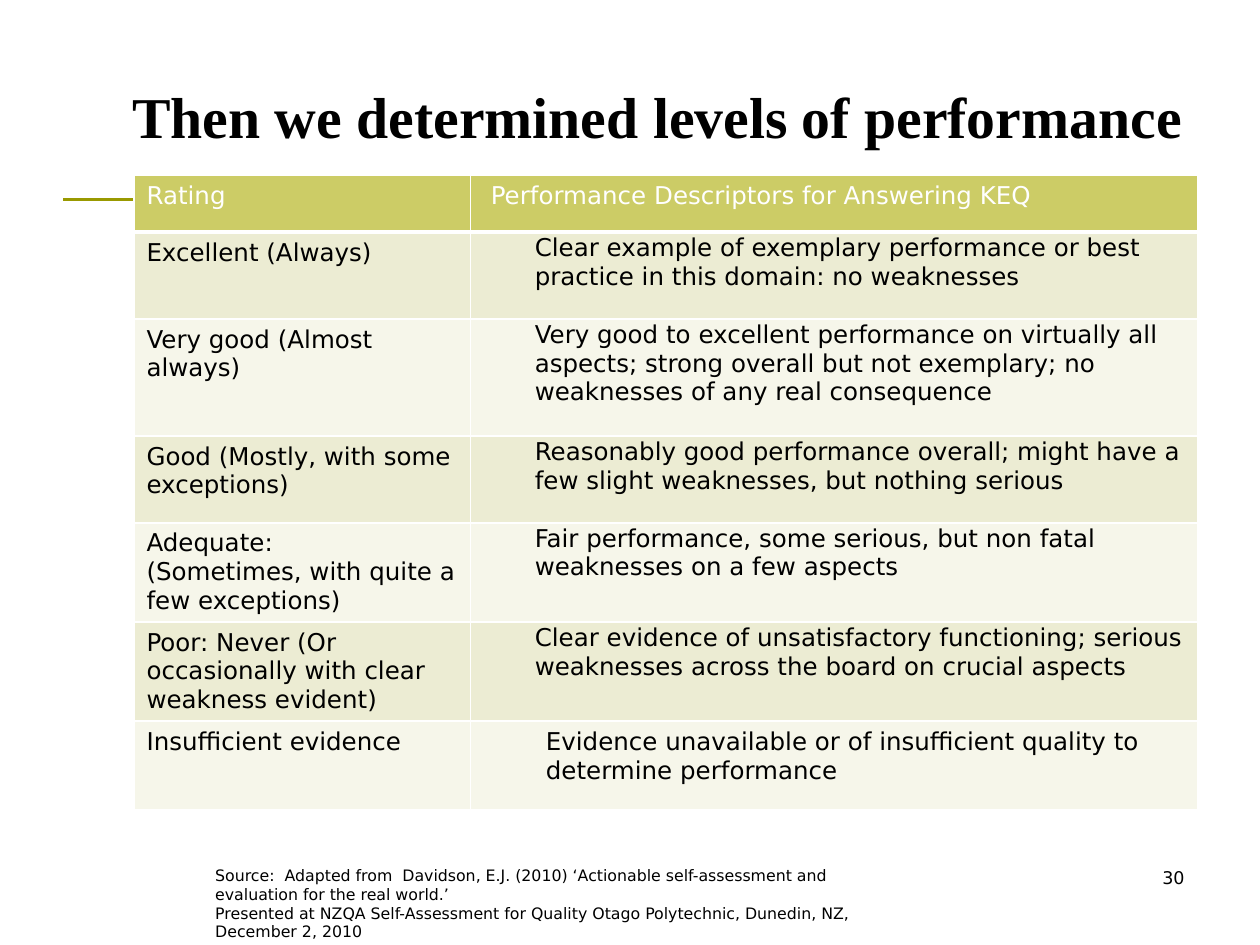
"""Build a slide with a table of performance ratings and their descriptors."""
import pptx
import pptx.dml.color
import pptx.enum.shapes
import pptx.enum.text
import pptx.oxml
import pptx.oxml.ns
import pptx.util
from pptx.util import Cm, Pt


def color(hex_code):
    return pptx.dml.color.RGBColor.from_string(hex_code)


def add_text(left, top, width, height, lines, font, size, align, bold=False):
    box = page.shapes.add_textbox(Cm(left), Cm(top), Cm(width), Cm(height))
    box.text_frame.word_wrap = True
    box.text_frame.text = "\n".join(lines)
    for para in box.text_frame.paragraphs:
        para.alignment = align
        for span in para.runs:
            span.font.name = font
            span.font.size = Pt(size)
            span.font.bold = bold
            span.font.color.rgb = color("000000")
    return box


SANS = "DejaVu Sans"
ALIGN = pptx.enum.text.PP_ALIGN
ROWS = [
    ("Rating", "Performance Descriptors for Answering KEQ"),
    ("Excellent (Always)",
     "Clear example of exemplary performance or best practice in this domain: no weaknesses"),
    ("Very good (Almost always)",
     "Very good to excellent performance on virtually all aspects; strong overall "
     "but not exemplary; no weaknesses of any real consequence"),
    ("Good (Mostly, with some exceptions)",
     "Reasonably good performance overall; might have a few slight weaknesses, but nothing serious"),
    ("Adequate:\v(Sometimes, with quite a few exceptions)",
     "Fair performance, some serious, but non fatal weaknesses on a few aspects"),
    ("Poor: Never (Or occasionally with clear weakness evident)",
     "Clear evidence of unsatisfactory functioning; serious weaknesses across the board on crucial aspects"),
    ("Insufficient evidence",
     "Evidence unavailable or of insufficient quality to determine performance"),
]
HEIGHTS = [1.14, 1.75, 2.36, 1.75, 2, 2, 1.78]
WIDTHS = [6.78, 14.66]

deck = pptx.Presentation()
deck.slide_width = Cm(25.4)
deck.slide_height = Cm(19.05)
page = deck.slides.add_slide(deck.slide_layouts[6])

rule = page.shapes.add_connector(
    pptx.enum.shapes.MSO_CONNECTOR.STRAIGHT, Cm(1.27), Cm(4.02), Cm(23.7), Cm(4.02))
rule.line.color.rgb = color("999900")
rule.line.width = Pt(1.5)
rule._element.spPr.append(pptx.oxml.parse_xml(
    f"<a:effectLst {pptx.oxml.ns.nsdecls('a')}/>"))

table = page.shapes.add_table(
    len(ROWS), len(WIDTHS), Cm(2.7), Cm(3.54), Cm(sum(WIDTHS)), Cm(sum(HEIGHTS))).table
table.first_row = False
table.horz_banding = False
for column, width in zip(table.columns, WIDTHS):
    column.width = Cm(width)

for row_index, texts in enumerate(ROWS):
    table.rows[row_index].height = Cm(HEIGHTS[row_index])
    is_header = row_index == 0
    band = "CCCC66" if is_header else ("F6F6EA", "ECECD3")[row_index % 2]
    for column_index, text in enumerate(texts):
        cell = table.cell(row_index, column_index)
        para = cell.text_frame.paragraphs[0]
        para.text = text
        if column_index == 1:
            para.level = 0 if is_header else 1
            para._p.get_or_add_pPr().set("marL", str(Cm(0.16 if is_header else 1.27)))
            if 0 < row_index < len(ROWS) - 1:
                cell.margin_left = cell.margin_right = cell.margin_top = Cm(0.03)
                cell.margin_bottom = 0
        for span in para.runs:
            span.font.name = SANS
            span.font.size = Pt(14)
            span.font.color.rgb = color("FFFFFF" if is_header else "000000")
        for side in "LRTB":
            weight = Pt(3 if is_header and side == "B" else 1)
            cell._tc.get_or_add_tcPr().append(pptx.oxml.parse_xml(
                f"<a:ln{side} {pptx.oxml.ns.nsdecls('a')} w='{weight}'>"
                f"<a:solidFill><a:srgbClr val='FFFFFF'/></a:solidFill></a:ln{side}>"))
        cell.fill.solid()
        cell.fill.fore_color.rgb = color(band)

add_text(19.91, 17.35, 4.22, 1.27, ["30"], SANS, 10, ALIGN.RIGHT)
add_text(4.09, 17.32, 14.55, 1.02, [
    "Source:  Adapted from  Davidson, E.J. (2010) ‘Actionable self-assessment and "
    "evaluation for the real world.’",
    "Presented at NZQA Self-Assessment for Quality Otago Polytechnic, Dunedin, NZ, "
    "December 2, 2010",
], SANS, 9, ALIGN.LEFT)
title = add_text(1.9, 1.32, 22.71, 2, ["Then we determined levels of performance"],
                 "Times New Roman", 33, ALIGN.CENTER, bold=True)
title.text_frame.vertical_anchor = pptx.enum.text.MSO_ANCHOR.MIDDLE

deck.save("out.pptx")
